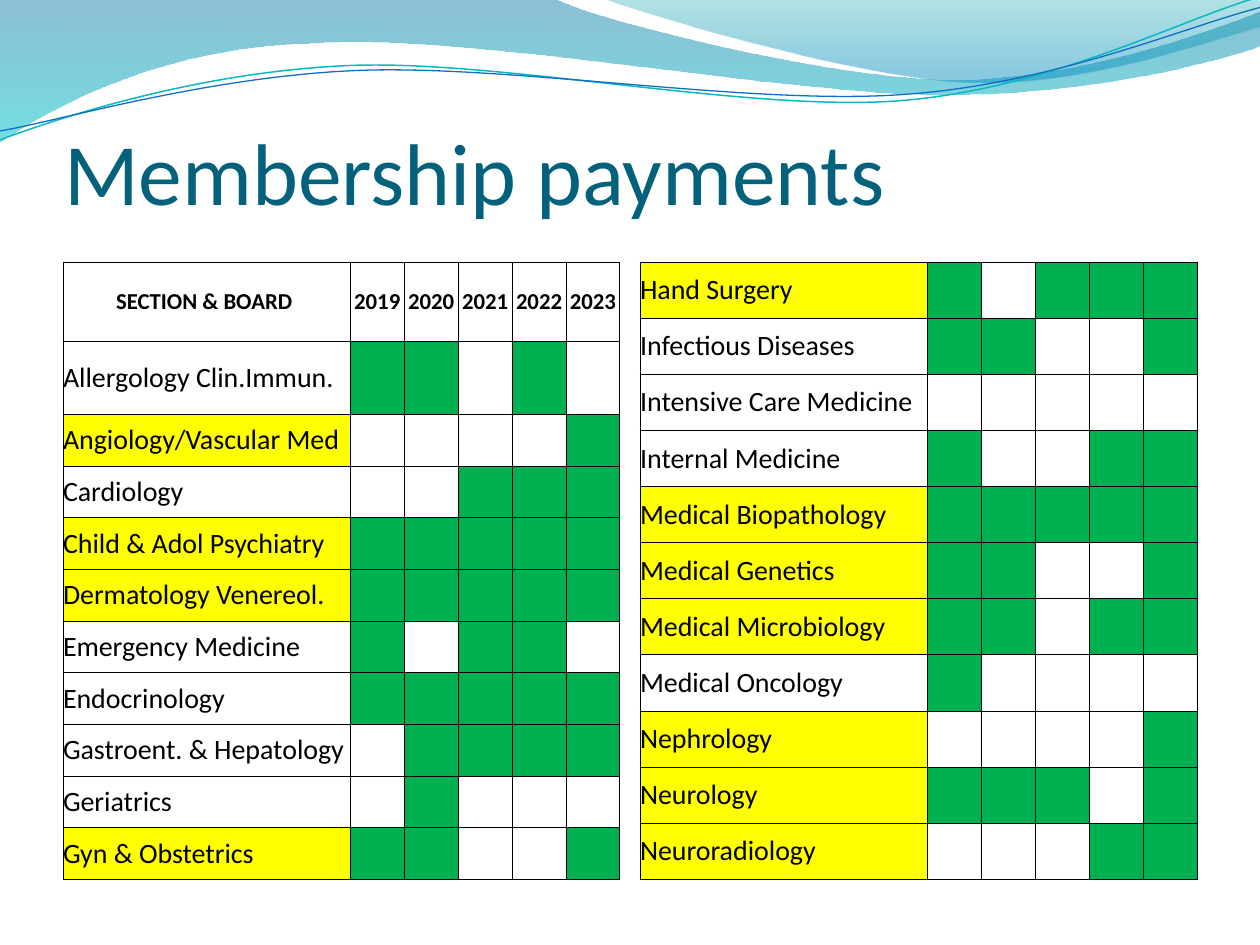
import math

import lxml.etree
import pptx
import pptx.dml.color
import pptx.enum.text
import pptx.oxml.ns
import pptx.util

THEME = {
    "font": "Calibri",
    "title_size": 50, "head_size": 13, "body_size": 16, "border_width": 0.5,
    "title": "04617B", "text": "000000", "border": "000000",
    "paid": "00B050", "highlight": "FFFF00",
    "plain_table": "{2D5ABB26-0587-4C30-8999-92F81FD0307C}",
}
YEARS = ["2019", "2020", "2021", "2022", "2023"]
LEFT_SECTIONS = [
    ("Allergology Clin.Immun.", False, "11010"),
    ("Angiology/Vascular Med", True, "00001"),
    ("Cardiology", False, "00111"),
    ("Child & Adol Psychiatry", True, "11111"),
    ("Dermatology Venereol.", True, "11111"),
    ("Emergency Medicine", False, "10110"),
    ("Endocrinology", False, "11111"),
    ("Gastroent. & Hepatology", False, "01111"),
    ("Geriatrics", False, "01000"),
    ("Gyn & Obstetrics", True, "11001"),
]
RIGHT_SECTIONS = [
    ("Hand Surgery", True, "10111"),
    ("Infectious Diseases", False, "11001"),
    ("Intensive Care Medicine", False, "00000"),
    ("Internal Medicine", False, "10011"),
    ("Medical Biopathology", True, "11111"),
    ("Medical Genetics", True, "11001"),
    ("Medical Microbiology", True, "11011"),
    ("Medical Oncology", False, "10000"),
    ("Nephrology", True, "00001"),
    ("Neurology", True, "11101"),
    ("Neuroradiology", True, "00011"),
]
BANDS = [
    ([(0, 0), (4.4, -0.01),
      (4.76, 0.17, 6.64, 0.63, 7.58, 0.63), (8.53, 0.63, 9.58, 0.26, 10, 0.09),
      (10.01, 0.36),
      (9.83, 0.44, 8.7, 0.76, 7.46, 0.75), (6.22, 0.75, 3.82, 0.28, 2.57, 0.34),
      (1.29, 0.36, 0.46, 0.83, -0.01, 1.13), (0, 0)],
     [(0, "0074A1", 45), (1, "00C6CF", 55)]),
    ([(4.79, -0.01),
      (5.09, 0.11, 6.82, 0.62, 7.69, 0.65), (8.56, 0.69, 9.61, 0.32, 10, 0.21),
      (10, 0), (4.79, -0.01)],
     [(0, "00A1A9", 30), (0.8, "008BBF", 45)]),
]
STRANDS = [
    ([(0, 1.11), (0.48, 0.93, 1.58, 0.57, 2.77, 0.52),
      (3.95, 0.47, 5.93, 0.89, 7.13, 0.8), (8.33, 0.71, 9.38, 0.15, 9.98, -0.02)],
     (4.99, 0.58), "0AB8BF", 0.85),
    ([(0, 1.04), (0.47, 0.96, 1.64, 0.61, 2.83, 0.56),
      (4.03, 0.51, 5.97, 0.84, 7.17, 0.75), (8.36, 0.67, 9.41, 0.21, 10, 0.06)],
     (5, 0.59), "0F6FC6", 0.75),
]
STRAND_TILT = -2.7

rgb = pptx.dml.color.RGBColor.from_string
qn = pptx.oxml.ns.qn

deck = pptx.Presentation()
deck.slide_width = pptx.util.Inches(10)
deck.slide_height = pptx.util.Inches(7.5)
column = deck.slide_width / 10
row = deck.slide_height / 7.5
slide = deck.slides.add_slide(deck.slide_layouts[5])


def draw_wave(steps, closed, tilt=0, center=(0, 0)):
    cos, sin = math.cos(math.radians(-tilt)), math.sin(math.radians(-tilt))
    points = []
    for step in steps:
        for x, y in zip(step[::2], step[1::2]):
            dx, dy = x - center[0], y - center[1]
            points.append((round((center[0] + dx * cos - dy * sin) * column),
                           round((center[1] + dx * sin + dy * cos) * row)))
    builder = slide.shapes.build_freeform(*points[0])
    builder.add_line_segments(points[1:], close=closed)
    wave = builder.convert_to_shape()
    wave.rotation = tilt
    wave.shadow.inherit = False
    segments = iter(list(wave._element.iter(qn("a:lnTo"))))
    for step in steps[1:]:
        segment = next(segments)
        if len(step) == 6:
            curve = lxml.etree.Element(qn("a:cubicBezTo"))
            segment.addprevious(curve)
            for part in (segment, next(segments), next(segments)):
                curve.append(part[0])
                part.getparent().remove(part)
    return wave


def style_cell(cell, fill, text="", size=THEME["body_size"], bold=False, align=None):
    cell.margin_left = cell.margin_right = cell.margin_top = cell.margin_bottom = 0
    cell.vertical_anchor = pptx.enum.text.MSO_ANCHOR.MIDDLE
    properties = cell._tc.get_or_add_tcPr()
    for side in ("a:lnL", "a:lnR", "a:lnT", "a:lnB"):
        border = lxml.etree.SubElement(properties, qn(side))
        border.set("w", str(pptx.util.Pt(THEME["border_width"])))
        solid = lxml.etree.SubElement(border, qn("a:solidFill"))
        lxml.etree.SubElement(solid, qn("a:srgbClr")).set("val", THEME["border"])
    if fill:
        cell.fill.solid()
        cell.fill.fore_color.rgb = rgb(THEME[fill])
    else:
        cell.fill.background()
    if text:
        cell.text = text
        paragraph = cell.text_frame.paragraphs[0]
        paragraph.alignment = align
        paragraph.font.name = THEME["font"]
        paragraph.font.size = pptx.util.Pt(size)
        paragraph.font.bold = bold
        paragraph.font.color.rgb = rgb(THEME["text"])


for outline, stops in BANDS:
    band = draw_wave(outline, True)
    band.line.fill.background()
    band.fill.gradient()
    band.fill.gradient_angle = 270
    for stop, (position, color, opacity) in zip(band.fill.gradient_stops, stops):
        stop.position = position
        stop.color.rgb = rgb(color)
    for tint, (position, color, opacity) in zip(band._element.spPr.iter(qn("a:srgbClr")), stops):
        lxml.etree.SubElement(tint, qn("a:alpha")).set("val", str(opacity * 1000))

for outline, center, color, width in STRANDS:
    strand = draw_wave(outline, False, STRAND_TILT, center)
    strand.fill.background()
    strand.line.color.rgb = rgb(color)
    strand.line.width = pptx.util.Pt(width)

title = slide.shapes.title
title.left, title.top = round(0.51 * column), round(0.52 * row)
title.width, title.height = round(9 * column), round(1.25 * row)
title.text = "Membership payments"
heading = title.text_frame
heading.auto_size = pptx.enum.text.MSO_AUTO_SIZE.NONE
heading.vertical_anchor = pptx.enum.text.MSO_ANCHOR.BOTTOM
heading.margin_left = heading.margin_right = heading.margin_bottom = 0
heading.margin_top = round(0.05 * row)
heading.paragraphs[0].alignment = pptx.enum.text.PP_ALIGN.LEFT
heading.paragraphs[0].font.name = THEME["font"]
heading.paragraphs[0].font.size = pptx.util.Pt(THEME["title_size"])
heading.paragraphs[0].font.color.rgb = rgb(THEME["title"])

table_width, table_height, name_width = 4.42, 4.9, 2.28
year_width = (table_width - name_width) / len(YEARS)
for left, header, sections, tall_rows in (
    (0.5, ["SECTION & BOARD ", *YEARS], LEFT_SECTIONS, [0.63, 0.58]),
    (5.08, [], RIGHT_SECTIONS, []),
):
    first = 1 if header else 0
    row_count = first + len(sections)
    payments = slide.shapes.add_table(
        row_count, 1 + len(YEARS), round(left * column), round(2.08 * row),
        round(table_width * column), round(table_height * row)).table
    payments.first_row = payments.horz_banding = False
    payments._tbl.tblPr.find(qn("a:tableStyleId")).text = THEME["plain_table"]
    for i, width in enumerate([name_width] + [year_width] * len(YEARS)):
        payments.columns[i].width = round(width * column)
    even_rows = row_count - len(tall_rows)
    even_height = (table_height - sum(tall_rows)) / even_rows
    for i, height in enumerate(tall_rows + [even_height] * even_rows):
        payments.rows[i].height = round(height * row)
    for i, label in enumerate(header):
        style_cell(payments.cell(0, i), None, label, THEME["head_size"], True,
                   pptx.enum.text.PP_ALIGN.CENTER)
    for r, (section, highlighted, paid) in enumerate(sections, first):
        style_cell(payments.cell(r, 0), "highlight" if highlighted else None, section)
        for c, flag in enumerate(paid, 1):
            style_cell(payments.cell(r, c), "paid" if flag == "1" else None)

deck.save("out.pptx")
